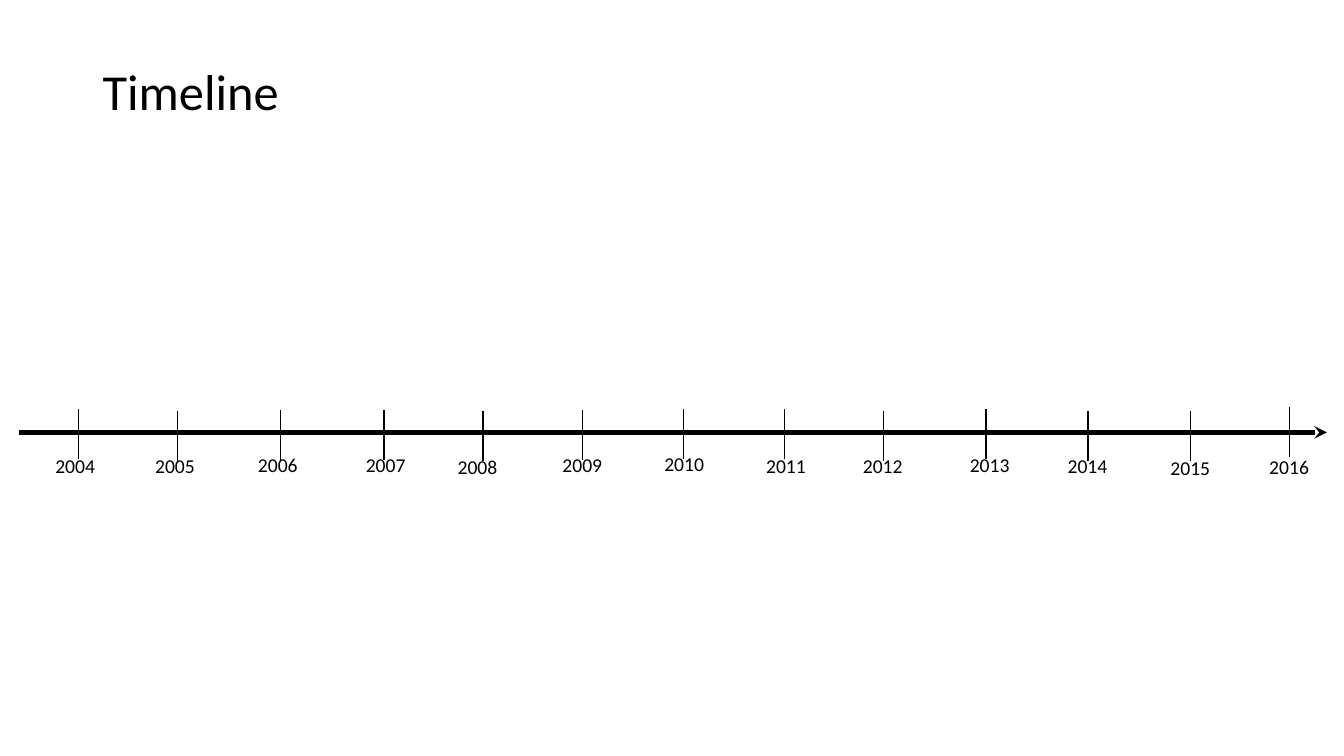
from typing import NamedTuple

from lxml import etree
from pptx import Presentation
from pptx.dml.color import RGBColor
from pptx.enum.shapes import MSO_CONNECTOR
from pptx.enum.text import MSO_ANCHOR, MSO_AUTO_SIZE
from pptx.oxml.ns import qn
from pptx.shapes.connector import Connector
from pptx.slide import Slide
from pptx.text.text import TextFrame
from pptx.util import Emu, Pt

STRAIGHT = MSO_CONNECTOR.STRAIGHT
MIDDLE = MSO_ANCHOR.MIDDLE
FIT_SHAPE = MSO_AUTO_SIZE.SHAPE_TO_FIT_TEXT

BLACK = RGBColor(0x00, 0x00, 0x00)
FONT = "Calibri"
EMU_PER_PX = 9144  # 100 px to the inch
BLANK_LAYOUT = 6

FIRST_YEAR = 2004
TICK_HEIGHT = 49
LABEL_WIDTH, LABEL_HEIGHT = 60, 34
AXIS_LEFT, AXIS_RIGHT, AXIS_Y = 19, 1316, 429


class YearMark(NamedTuple):
    tick_x: int
    tick_top: int
    label_left: int
    label_top: int


YEAR_MARKS = [
    YearMark(78, 406, 45, 445),
    YearMark(176, 408, 144, 445),
    YearMark(278, 407, 246, 444),
    YearMark(381, 407, 353, 444),
    YearMark(479, 408, 444, 446),
    YearMark(578, 407, 548, 444),
    YearMark(678, 406, 649, 443),
    YearMark(778, 406, 750, 445),
    YearMark(876, 408, 846, 445),
    YearMark(978, 406, 952, 444),
    YearMark(1079, 408, 1049, 445),
    YearMark(1181, 408, 1151, 447),
    YearMark(1279, 404, 1249, 446),
]


def px(length: int) -> Emu:
    return Emu(length * EMU_PER_PX)


def add_line(slide: Slide, x1: int, y1: int, x2: int, y2: int, width: float) -> Connector:
    connector = slide.shapes.add_connector(STRAIGHT, px(x1), px(y1), px(x2), px(y2))
    connector.line.color.rgb = BLACK
    connector.line.width = Pt(width)
    etree.SubElement(connector._element.spPr, qn("a:effectLst"))
    return connector


def add_text(slide: Slide, text: str, left: int, top: int, width: int, height: int,
             size: int) -> TextFrame:
    frame = slide.shapes.add_textbox(px(left), px(top), px(width), px(height)).text_frame
    paragraph = frame.paragraphs[0]
    paragraph.text = text
    paragraph.font.name = FONT
    paragraph.font.size = Pt(size)
    paragraph.font.color.rgb = BLACK
    return frame


def add_title(slide: Slide) -> None:
    frame = add_text(slide, "Timeline", 92, 40, 1150, 106, 36)
    frame.word_wrap = True
    frame.vertical_anchor = MIDDLE
    frame.paragraphs[0].line_spacing = 0.9


def add_axis(slide: Slide) -> None:
    axis = add_line(slide, AXIS_LEFT, AXIS_Y, AXIS_RIGHT, AXIS_Y, 3)
    etree.SubElement(axis.line._get_or_add_ln(), qn("a:tailEnd"), type="stealth")


def add_year(slide: Slide, year: int, mark: YearMark) -> None:
    add_line(slide, mark.tick_x, mark.tick_top, mark.tick_x, mark.tick_top + TICK_HEIGHT, 1)
    frame = add_text(slide, str(year), mark.label_left, mark.label_top,
                     LABEL_WIDTH, LABEL_HEIGHT, 14)
    frame.word_wrap = False
    frame.auto_size = FIT_SHAPE


def main() -> None:
    presentation = Presentation()
    presentation.slide_width = px(1333)
    presentation.slide_height = px(750)
    slide = presentation.slides.add_slide(presentation.slide_layouts[BLANK_LAYOUT])
    add_title(slide)
    add_axis(slide)
    for year, mark in enumerate(YEAR_MARKS, FIRST_YEAR):
        add_year(slide, year, mark)
    presentation.save("out.pptx")


if __name__ == "__main__":
    main()
